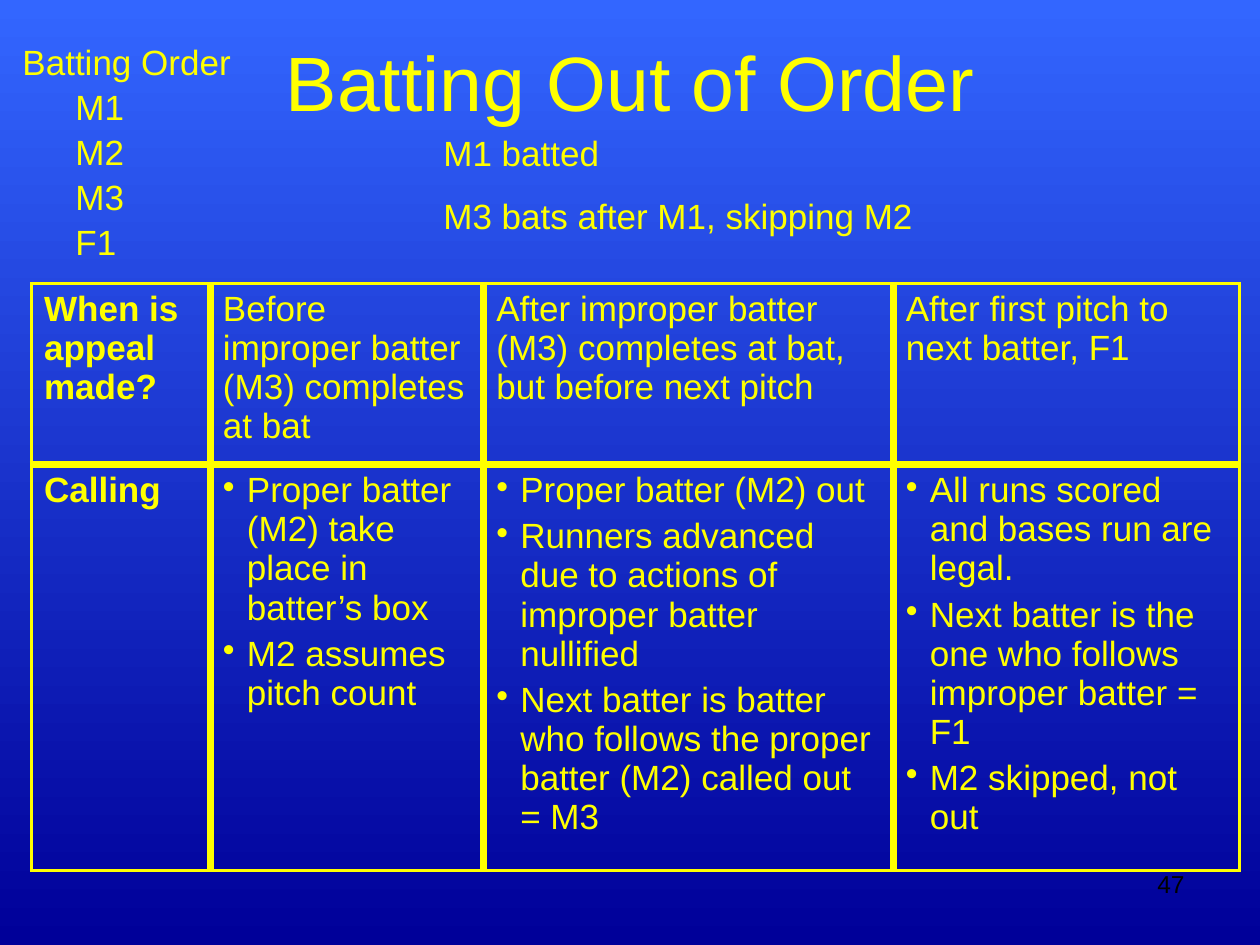
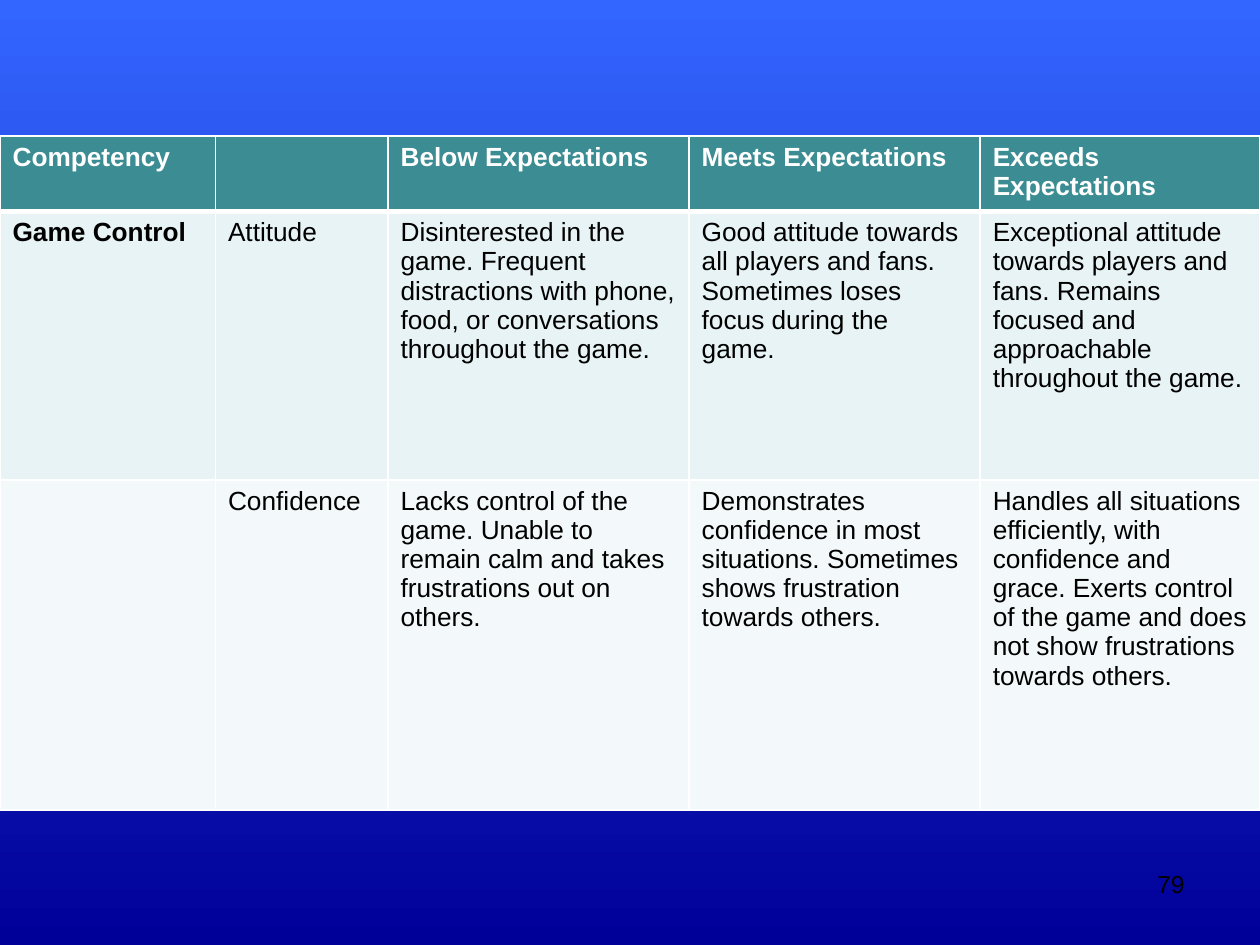
import pptx
import pptx.dml.color
import pptx.enum.text
import pptx.oxml
import pptx.oxml.ns
import pptx.util
from pptx.util import Inches

FONT = "Arial"
YELLOW, WHITE, BLACK = "FFFF00", "FFFFFF", "000000"
SKY, NAVY = "3366FF", "000099"
TEAL, PALE_TEAL, PALER_TEAL = "3C8C93", "E7F3F4", "F3F9FA"
LEFT = pptx.enum.text.PP_ALIGN.LEFT
CENTER = pptx.enum.text.PP_ALIGN.CENTER
RIGHT = pptx.enum.text.PP_ALIGN.RIGHT
BOX_SPACING = 1.07
HANG = 0.19

APPEAL_TIMES = [
    "When is appeal made?",
    "Before improper batter (M3) completes at bat",
    "After improper batter (M3) completes at bat, but before next pitch",
    "After first pitch to next batter, F1",
]
CALLS = [
    ["Proper batter (M2) take place in batter’s box",
     "M2 assumes pitch count"],
    ["Proper batter (M2) out",
     "Runners advanced due to actions of improper batter nullified",
     "Next batter is batter who follows the proper batter (M2) called out = M3"],
    ["All runs scored and bases run are legal.",
     "Next batter is the one who follows improper batter = F1",
     "M2 skipped, not out"],
]
COMPETENCIES = [
    ["Competency", "", "Below Expectations", "Meets Expectations",
     "Exceeds Expectations"],
    ["Game Control", "Attitude",
     "Disinterested in the game. Frequent distractions with phone, food, "
     "or conversations throughout the game.",
     "Good attitude towards all players and fans. Sometimes loses focus "
     "during the game.",
     "Exceptional attitude towards players and fans. Remains focused and "
     "approachable throughout the game."],
    ["", "Confidence",
     "Lacks control of the game. Unable to remain calm and takes "
     "frustrations out on others.",
     "Demonstrates confidence in most situations. Sometimes shows "
     "frustration towards others.",
     "Handles all situations efficiently, with confidence and grace. "
     "Exerts control of the game and does not show frustrations towards "
     "others."],
]


def color(value):
    return pptx.dml.color.RGBColor.from_string(value)


def add_span(para, text, size, ink, bold=False):
    span = para.add_run()
    span.text = text
    span.font.name = FONT
    span.font.size = pptx.util.Pt(size)
    span.font.bold = bold
    span.font.color.rgb = color(ink)


def set_indent(para, left, first=0.0, bullet=None):
    properties = para._p.get_or_add_pPr()
    properties.set("marL", str(Inches(left)))
    properties.set("indent", str(Inches(first)))
    if bullet:
        mark = pptx.oxml.parse_xml(
            f'<a:buChar {pptx.oxml.ns.nsdecls("a")} char="{bullet}"/>')
        properties.append(mark)


def paragraphs(frame, count):
    """Return the frame's first paragraph and enough new ones after it."""
    return [frame.paragraphs[0]] + [frame.add_paragraph()
                                    for _ in range(count - 1)]


def add_text(slide, place, lines, size, ink, align=LEFT, spacing=BOX_SPACING):
    """Add a text box with one paragraph a line and return the paragraphs."""
    box = slide.shapes.add_textbox(*(Inches(length) for length in place))
    box.text_frame.word_wrap = True
    paras = paragraphs(box.text_frame, len(lines))
    for para, line in zip(paras, lines):
        para.alignment = align
        para.line_spacing = spacing
        add_span(para, line, size, ink)
    return paras


def add_slide(deck, number):
    """Add a slide with the shared gradient and its page number."""
    slide = deck.slides.add_slide(deck.slide_layouts[6])
    fill = slide.background.fill
    fill.gradient()
    fill.gradient_angle = 270
    for stop, shade in zip(fill.gradient_stops, (SKY, NAVY)):
        stop.color.rgb = color(shade)
    add_text(slide, (7.17, 6.83, 2.33, 0.52), [str(number)], 14, BLACK, RIGHT)
    return slide


def add_grid(slide, left, top, widths, heights):
    """Add a table without banding and return it."""
    frame = slide.shapes.add_table(
        len(heights), len(widths), Inches(left), Inches(top),
        Inches(sum(widths)), Inches(sum(heights)))
    table = frame.table
    table.first_row = table.horz_banding = False
    for column, width in zip(table.columns, widths):
        column.width = Inches(width)
    for row, height in zip(table.rows, heights):
        row.height = Inches(height)
    return table


def set_borders(cell, ink, widths):
    """Draw the cell's edges, with widths in the order left, right, top, bottom."""
    properties = cell._tc.get_or_add_tcPr()
    for side, width in zip("LRTB", widths):
        properties.append(pptx.oxml.parse_xml(
            f'<a:ln{side} {pptx.oxml.ns.nsdecls("a")} '
            f'w="{pptx.util.Pt(width)}"><a:solidFill><a:srgbClr val="{ink}"/>'
            f'</a:solidFill></a:ln{side}>'))


def fill_cell(cell, lines, size, ink, bold=False, bullet=None, gap=0):
    paras = paragraphs(cell.text_frame, len(lines))
    for para, line in zip(paras, lines):
        para.space_before = pptx.util.Pt(gap)
        if bullet:
            set_indent(para, HANG, -HANG, bullet)
        if line:
            add_span(para, line, size, ink, bold)


def add_appeal_table(slide):
    outer, inner = 2.25, 4.5
    table = add_grid(slide, 0.25, 2.25, (1.42, 2.17, 3.25, 2.75), (1.44, 3.22))
    rows = [[[text] for text in APPEAL_TIMES], [["Calling"]] + CALLS]
    last = len(APPEAL_TIMES) - 1
    for r, row in enumerate(rows):
        for c, lines in enumerate(row):
            cell = table.cell(r, c)
            edges = (c == 0, c == last, r == 0, r == 1)
            set_borders(cell, YELLOW,
                        [outer if edge else inner for edge in edges])
            cell.fill.background()
            bullet = "•" if r and c else None
            fill_cell(cell, lines, 20, YELLOW, c == 0, bullet, 4)


def add_competency_table(slide):
    table = add_grid(slide, 0, 1.08, (1.71, 1.37, 2.39, 2.31, 2.22),
                     (0.56, 2.13, 2.62))
    shades = (TEAL, PALE_TEAL, PALER_TEAL)
    for r, (row, shade) in enumerate(zip(COMPETENCIES, shades)):
        header = r == 0
        for c, text in enumerate(row):
            cell = table.cell(r, c)
            set_borders(cell, WHITE,
                        (1, 1, 3 if r == 1 else 1, 3 if header else 1))
            cell.fill.solid()
            cell.fill.fore_color.rgb = color(shade)
            fill_cell(cell, [text], 15, WHITE if header else BLACK,
                      header or c == 0)


def add_batting_slide(deck):
    slide = add_slide(deck, 47)
    add_text(slide, (0.67, 0.17, 8.67, 0.83), ["Batting Out of Order"],
             44, YELLOW, CENTER)
    add_text(slide, (3.42, 0.83, 6.25, 1.03),
             ["M1 batted", "M3 bats after M1, skipping M2"],
             20, YELLOW, spacing=1.5)
    add_appeal_table(slide)
    order = add_text(slide, (0.08, 0.25, 1.92, 1.77),
                     ["Batting Order", "M1", "M2", "M3", "F1"], 20, YELLOW)
    for player in order[1:]:
        set_indent(player, 0.42)


def main():
    deck = pptx.Presentation()
    deck.slide_width, deck.slide_height = Inches(10), Inches(7.5)
    add_batting_slide(deck)
    add_competency_table(add_slide(deck, 79))
    deck.save("out.pptx")


if __name__ == "__main__":
    main()
